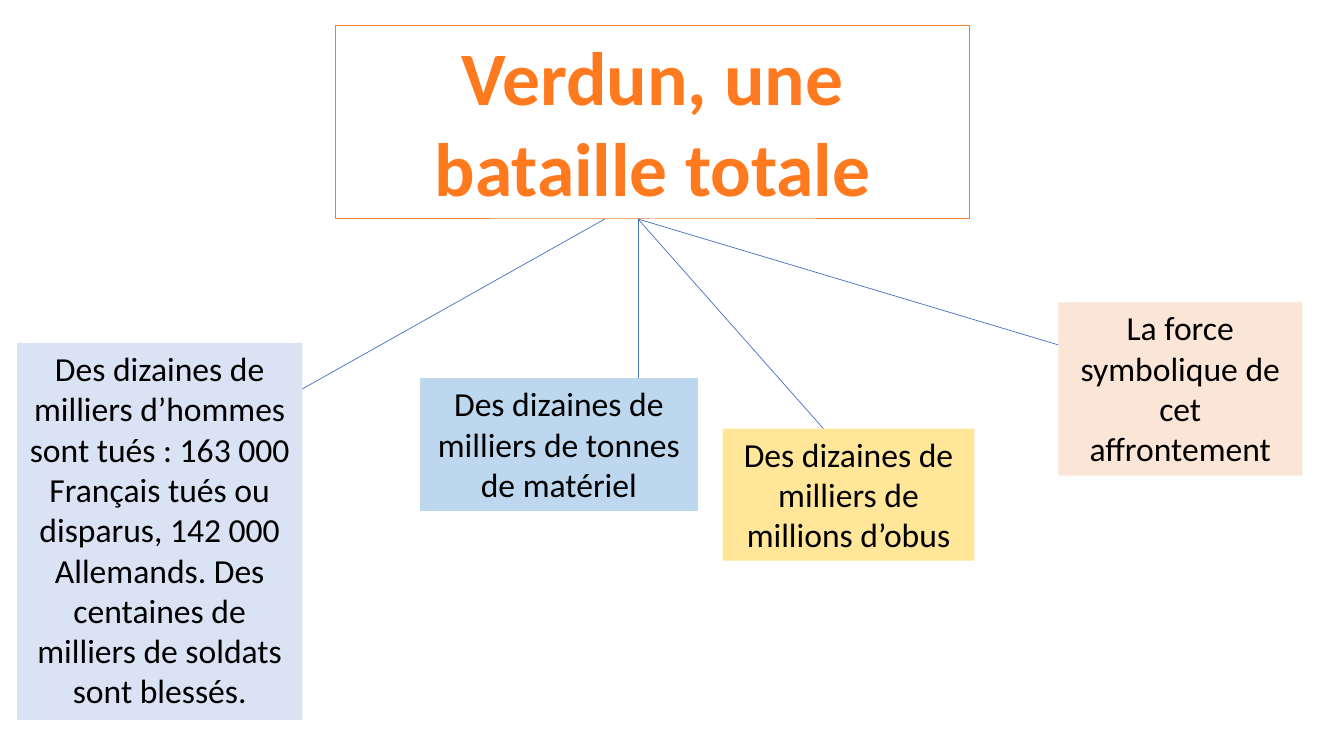
from dataclasses import dataclass

from lxml import etree
from pptx import Presentation
from pptx import util as u
from pptx.dml.color import RGBColor
from pptx.enum import shapes, text
from pptx.oxml import ns


@dataclass(frozen=True)
class Theme:
    font: str = "Calibri"
    title_size: int = 54
    body_size: int = 24
    title_color: str = "FF7A1F"
    title_border: str = "ED7D31"
    body_color: str = "000000"
    branch_color: str = "4472C4"
    lavender: str = "DAE3F3"
    blue: str = "BDD7EE"
    yellow: str = "FFE699"
    peach: str = "FBE5D6"
    border_width: float = 0.75
    branch_width: float = 0.5


THEME = Theme()

# Left, top, width, height in centimetres
TITLE_BOX = (8.46, 0.64, 15.98, 4.88)
TITLE_BOTTOM = TITLE_BOX[1] + TITLE_BOX[3]

# Wording, box, fill, border, start x of the branch, end point of the branch
THEMES_OF_BATTLE = [
    ("Des dizaines de milliers d’hommes sont tués : 163 000 Français tués ou "
     "disparus, 142 000 Allemands. Des centaines de milliers de soldats sont "
     "blessés.",
     (0.43, 8.64, 7.19, 9.5), THEME.lavender, None, 15.24, (7.62, 9.8)),
    ("Des dizaines de milliers de tonnes de matériel",
     (10.59, 9.53, 6.99, 3.33), THEME.blue, THEME.blue, 16.08, (16.08, 9.53)),
    ("Des dizaines de milliers de millions d’obus",
     (18.21, 10.8, 6.35, 3.33), THEME.yellow, None, 16.08, (20.75, 10.8)),
    ("La force symbolique de cet affrontement",
     (26.67, 7.62, 6.15, 4.37), THEME.peach, None, 16.08, (26.67, 8.69)),
]


def apply_format(target, values):
    for name, value in values.items():
        setattr(target, name, value)


def style_line(line, color, width):
    line.color.rgb = RGBColor.from_string(color)
    line.width = u.Pt(width)


def add_box(slide, wording, box, font_format, color, fill=None, border=None):
    """Rectangle with centred text, optionally filled and outlined."""
    shape = slide.shapes.add_shape(
        shapes.MSO_SHAPE.RECTANGLE, *(u.Cm(length) for length in box))
    shape.shadow.inherit = False
    if fill:
        shape.fill.solid()
        shape.fill.fore_color.rgb = RGBColor.from_string(fill)
    else:
        shape.fill.background()
    if border:
        style_line(shape.line, border, THEME.border_width)
    else:
        shape.line.fill.background()

    apply_format(shape.text_frame, {
        "word_wrap": True,
        "auto_size": text.MSO_AUTO_SIZE.SHAPE_TO_FIT_TEXT,
        "vertical_anchor": text.MSO_ANCHOR.TOP,
    })
    paragraph = shape.text_frame.paragraphs[0]
    paragraph.alignment = text.PP_ALIGN.CENTER
    run = paragraph.add_run()
    run.text = wording
    apply_format(run.font, {"name": THEME.font, **font_format})
    run.font.color.rgb = RGBColor.from_string(color)


def add_branch(slide, start, end):
    """Thin straight line from the title to a box."""
    connector = slide.shapes.add_connector(
        shapes.MSO_CONNECTOR.STRAIGHT,
        *(u.Cm(length) for length in (*start, *end)))
    style_line(connector.line, THEME.branch_color, THEME.branch_width)
    properties = connector.element.find(ns.qn("p:spPr"))
    etree.SubElement(properties, ns.qn("a:effectLst"))


def main():
    presentation = Presentation()
    apply_format(presentation, {
        "slide_width": u.Cm(33.87), "slide_height": u.Cm(19.05)})
    slide = presentation.slides.add_slide(presentation.slide_layouts[6])

    # Title
    add_box(slide, "Verdun, une bataille totale", TITLE_BOX,
            {"size": u.Pt(THEME.title_size), "bold": True},
            THEME.title_color, border=THEME.title_border)

    # Boxes
    for wording, box, fill, border, _, _ in THEMES_OF_BATTLE:
        add_box(slide, wording, box, {"size": u.Pt(THEME.body_size)},
                THEME.body_color, fill, border)

    # Branches
    for *_, start_x, end in THEMES_OF_BATTLE:
        add_branch(slide, (start_x, TITLE_BOTTOM), end)

    presentation.save("out.pptx")


if __name__ == "__main__":
    main()
